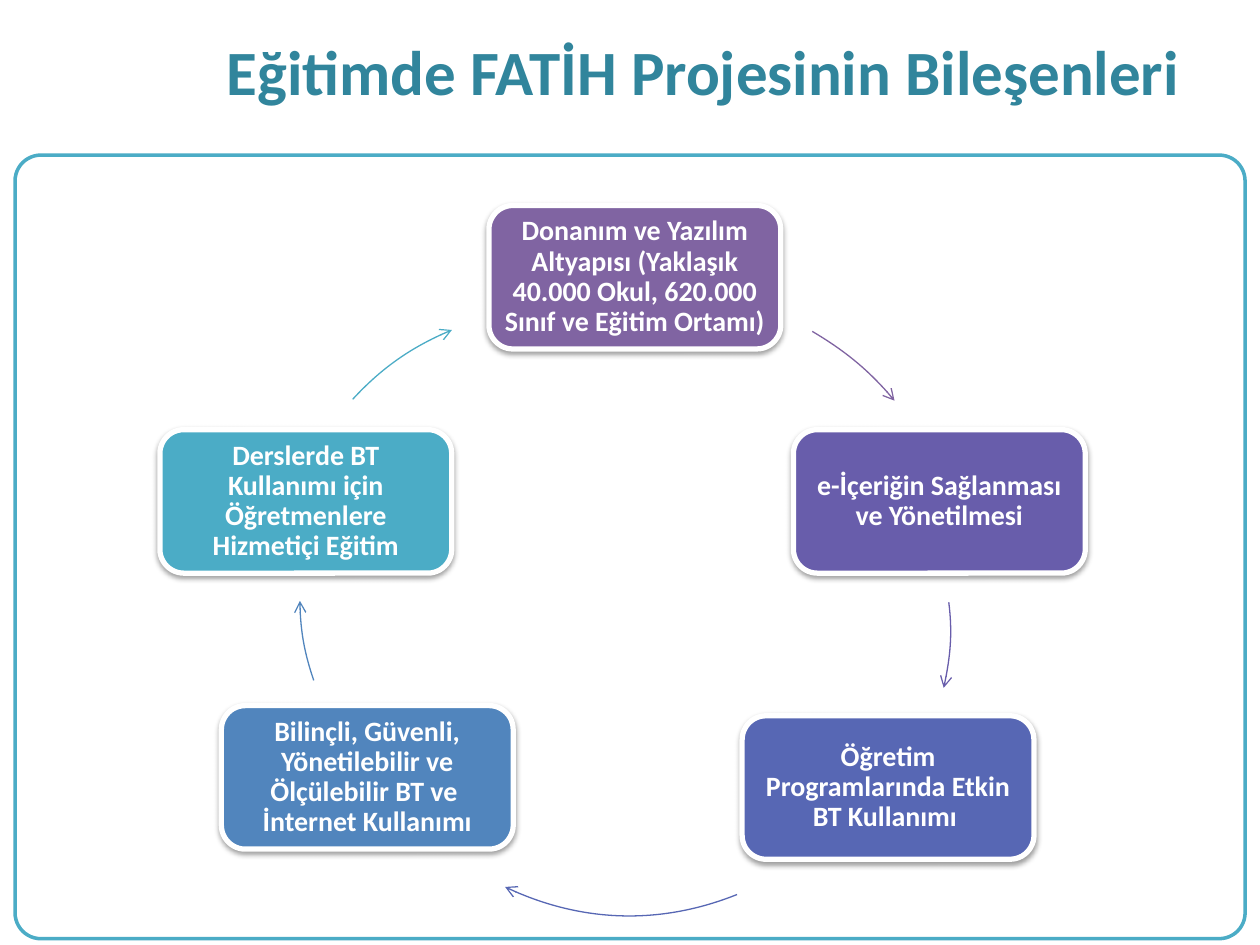
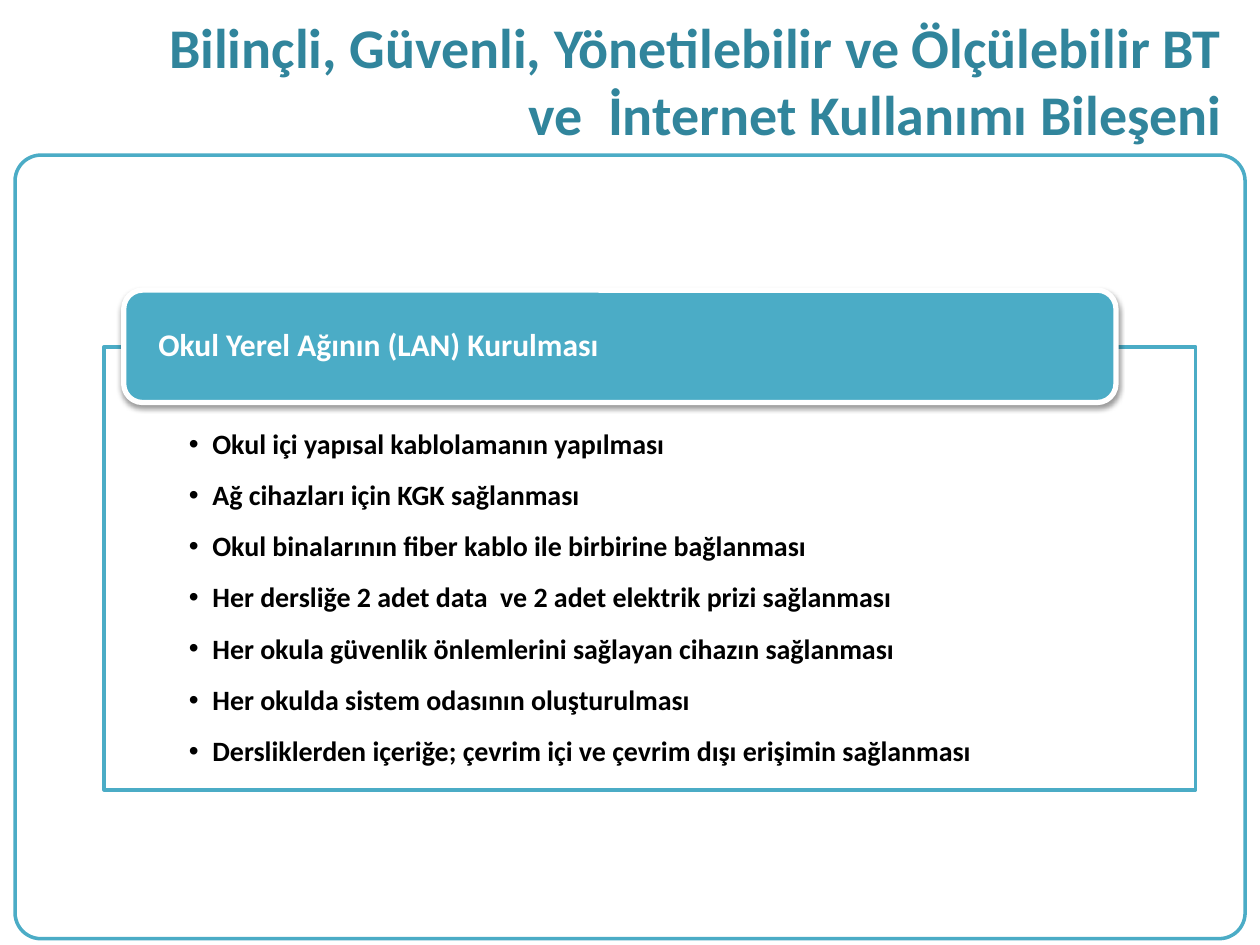
from lxml import etree
from pptx import Presentation
from pptx.dml.color import RGBColor
from pptx.enum.shapes import MSO_SHAPE
from pptx.enum.text import MSO_ANCHOR, MSO_AUTO_SIZE, PP_ALIGN
from pptx.oxml.ns import qn
from pptx.util import Pt

ROUNDED, RECTANGLE = MSO_SHAPE.ROUNDED_RECTANGLE, MSO_SHAPE.RECTANGLE
TOP, MIDDLE = MSO_ANCHOR.TOP, MSO_ANCHOR.MIDDLE
LEFT, CENTER, RIGHT = PP_ALIGN.LEFT, PP_ALIGN.CENTER, PP_ALIGN.RIGHT
NO_AUTOFIT = MSO_AUTO_SIZE.NONE

FONT = "Calibri"
TITLE_ONLY = 5
CARD_SIZE = (166.8, 82)
CIRCLE_SIZE = 329
COLORS = {
    "white": "FFFFFF", "black": "000000", "title": "31859C", "teal": "4BACC6",
    "purple": "8064A2", "violet": "685DAB", "indigo": "5767B4", "blue": "5185BD",
}

# Card text, colour, card corner, then the corner of the circle that the
# outgoing arrow follows and the arrow's Bezier points
CYCLE = [
    ("Donanım ve Yazılım Altyapısı (Yaklaşık 40.000 Okul, 620.000 Sınıf ve Eğitim Ortamı)",
     "purple", (279.4, 117.4), (218.9, 168.5),
     [(464.2, 189.4), (482.4, 200.2), (498.2, 213.1), (511.2, 229)]),
    ("e-İçeriğin Sağlanması ve Yönetilmesi",
     "violet", (453.4, 245.5), (214.6, 194.4),
     [(542.2, 344.2), (544.3, 360.7), (542.9, 377.3), (539.3, 393.1)]),
    ("Öğretim Programlarında Etkin BT Kullanımı ",
     "indigo", (424.1, 409), (195.1, 194.4),
     [(421.2, 511.2), (378, 528.5), (330.5, 527), (288.7, 506.9)]),
    ("Bilinçli, Güvenli, Yönetilebilir ve Ölçülebilir BT ve  İnternet Kullanımı",
     "blue", (126.5, 403.2), (171.4, 173.5),
     [(179.3, 388.8), (174.2, 373.7), (171.4, 358.6), (171.4, 343.4)]),
    ("Derslerde BT Kullanımı için Öğretmenlere Hizmetiçi Eğitim",
     "teal", (91.4, 245.5), (157.7, 175),
     [(201.6, 228.2), (217.4, 211), (236.9, 197.3), (258.3, 188.6)]),
]

LAN_TASKS = [
    "Okul içi yapısal kablolamanın yapılması",
    "Ağ cihazları için KGK sağlanması",
    "Okul binalarının fiber kablo ile birbirine bağlanması",
    "Her dersliğe 2 adet data  ve 2 adet elektrik prizi sağlanması",
    "Her okula güvenlik önlemlerini sağlayan cihazın sağlanması",
    "Her okulda sistem odasının oluşturulması",
    "Dersliklerden içeriğe; çevrim içi ve çevrim dışı erişimin sağlanması",
]


def color(name):
    return RGBColor.from_string(COLORS[name])


def place(shape, area):
    shape.left, shape.top, shape.width, shape.height = [Pt(length) for length in area]


def style_paragraph(paragraph, size, color_name, align):
    paragraph.alignment = align
    font = paragraph.font
    font.name, font.size, font.bold = FONT, Pt(size), True
    font.color.rgb = color(color_name)


def set_frame(shape, anchor, insets):
    frame = shape.text_frame
    frame.word_wrap = True
    frame.auto_size = NO_AUTOFIT
    frame.vertical_anchor = anchor
    (frame.margin_left, frame.margin_top,
     frame.margin_right, frame.margin_bottom) = [Pt(inset) for inset in insets]
    return frame


def add_box(slide, kind, area, fill, line, line_width):
    box = slide.shapes.add_shape(kind, *[Pt(length) for length in area])
    box.shadow.inherit = False
    box.fill.solid()
    box.fill.fore_color.rgb = color(fill)
    box.line.color.rgb = color(line)
    box.line.width = Pt(line_width)
    return box


def add_soft_shadow(shape):
    effects = shape.element.spPr.find(qn("a:effectLst"))
    shadow = etree.SubElement(effects, qn("a:outerShdw"), blurRad=str(Pt(3.1)),
                              dist=str(Pt(1.6)), dir="5400000", rotWithShape="0")
    tint = etree.SubElement(shadow, qn("a:srgbClr"), val=COLORS["black"])
    etree.SubElement(tint, qn("a:alpha"), val="38000")


def add_card(slide, area, fill, text, size, align, side_inset):
    card = add_box(slide, ROUNDED, area, fill, "white", 3)
    add_soft_shadow(card)
    paragraph = set_frame(card, MIDDLE, (side_inset, 0, side_inset, 0)).paragraphs[0]
    paragraph.text = text
    paragraph.line_spacing = 0.9
    style_paragraph(paragraph, size, "white", align)


def set_curve(shape, corner, points):
    """Replace the outline by one Bezier curve, measured from the circle's corner."""
    outline = shape.element.spPr.find(".//" + qn("a:path"))
    for child in list(outline):
        outline.remove(child)
    outline.set("w", str(Pt(CIRCLE_SIZE)))
    outline.set("h", str(Pt(CIRCLE_SIZE)))
    for command, group in (("a:moveTo", points[:1]), ("a:cubicBezTo", points[1:])):
        step = etree.SubElement(outline, qn(command))
        for x, y in group:
            etree.SubElement(step, qn("a:pt"), x=str(Pt(x - corner[0])),
                             y=str(Pt(y - corner[1])))


def add_curved_arrow(slide, corner, points, color_name):
    start, end = [(Pt(x), Pt(y)) for x, y in (points[0], points[-1])]
    builder = slide.shapes.build_freeform(*start)
    builder.add_line_segments([end], close=False)
    arrow = builder.convert_to_shape()
    place(arrow, corner + (CIRCLE_SIZE, CIRCLE_SIZE))
    set_curve(arrow, corner, points)
    arrow.shadow.inherit = False
    arrow.fill.background()
    arrow.line.color.rgb = color(color_name)
    arrow.line.width = Pt(0.75)
    line = arrow.element.spPr.find(qn("a:ln"))
    etree.SubElement(line, qn("a:tailEnd"), type="arrow")


def add_bullet(paragraph):
    properties = paragraph._p.get_or_add_pPr()
    properties.set("marL", str(Pt(13.5)))
    properties.set("indent", str(Pt(-13.5)))
    etree.SubElement(properties, qn("a:buFont"), typeface="Arial")
    etree.SubElement(properties, qn("a:buChar"), char="•")


def add_bullet_panel(slide, area, items):
    panel = add_box(slide, RECTANGLE, area, "white", "teal", 2)
    frame = set_frame(panel, TOP, (48.4, 47.6, 48.4, 8.6))
    for index, item in enumerate(items):
        paragraph = frame.add_paragraph() if index else frame.paragraphs[0]
        paragraph.text = item
        paragraph.level = 1
        add_bullet(paragraph)
        paragraph.line_spacing = 0.9
        paragraph.space_after = Pt(12)
        style_paragraph(paragraph, 16, "black", LEFT)


def add_framed_slide(deck, title_text, title_area, size, align):
    slide = deck.slides.add_slide(deck.slide_layouts[TITLE_ONLY])
    # Title
    title = slide.shapes.title
    place(title, title_area)
    paragraph = set_frame(title, MIDDLE, (7.2, 3.6, 7.2, 3.6)).paragraphs[0]
    paragraph.text = title_text
    style_paragraph(paragraph, size, "title", align)
    # Content frame
    frame = add_box(slide, ROUNDED, (8.6, 88.6, 702.9, 447.8), "white", "teal", 2)
    frame.adjustments[0] = 0.033
    return slide


def build_components_slide(deck):
    slide = add_framed_slide(deck, "Eğitimde FATİH Projesinin Bileşenleri",
                             (109.2, 14.8, 585.4, 51.1), 36, CENTER)
    for text, fill, card_corner, circle_corner, arrow_points in CYCLE:
        add_card(slide, card_corner + CARD_SIZE, fill, text, 16, CENTER, 5)
        add_curved_arrow(slide, circle_corner, arrow_points, fill)


def build_network_slide(deck):
    slide = add_framed_slide(
        deck, "Bilinçli, Güvenli, Yönetilebilir ve Ölçülebilir BT ve  İnternet Kullanımı Bileşeni",
        (82.3, 2.9, 623.5, 85), 32, RIGHT)
    add_bullet_panel(slide, (59.5, 198.2, 623.7, 253.2), LAN_TASKS)
    add_card(slide, (70.7, 165.8, 567, 64.2), "teal",
             "Okul Yerel Ağının (LAN) Kurulması", 18, LEFT, 16.7)


def main():
    deck = Presentation()
    deck.slide_width, deck.slide_height = Pt(720), Pt(540)
    build_components_slide(deck)
    build_network_slide(deck)
    deck.save("out.pptx")


if __name__ == "__main__":
    main()
